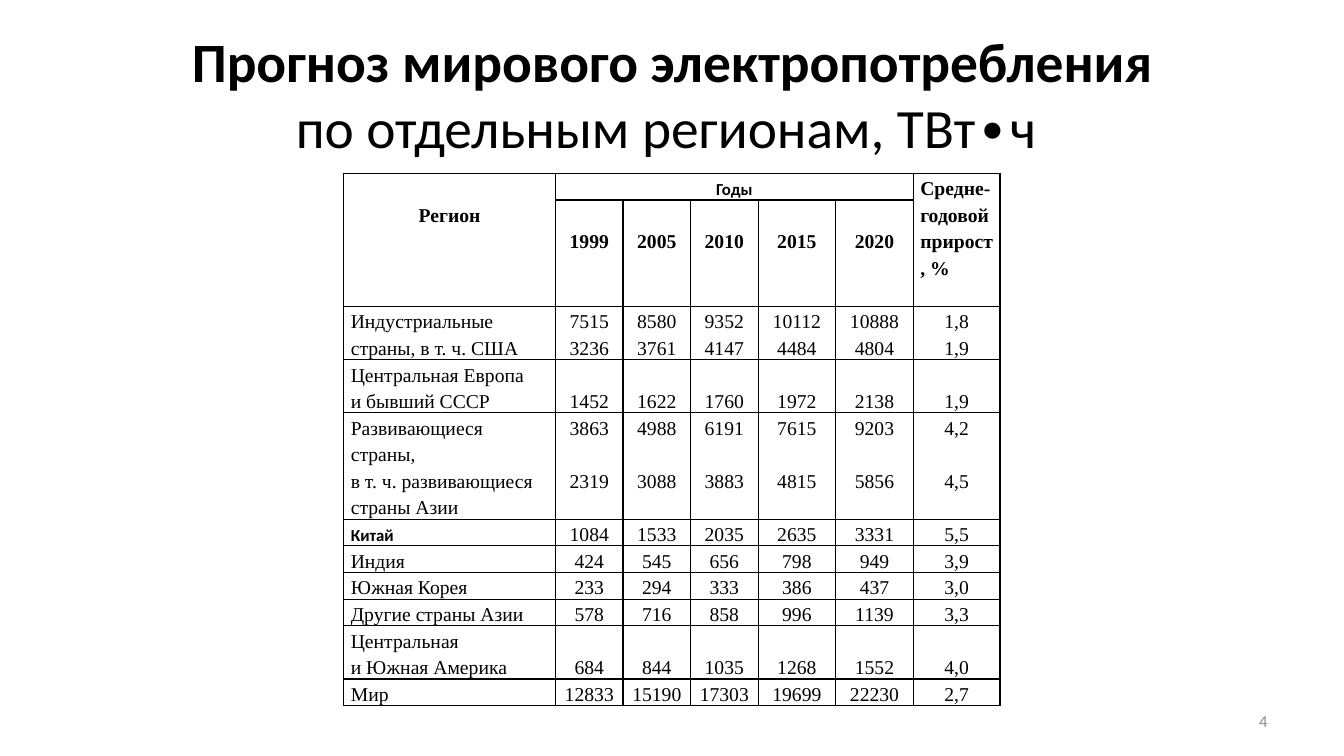
from lxml.etree import SubElement
from pptx import Presentation
from pptx.dml.color import RGBColor
from pptx.enum.text import MSO_ANCHOR as Anchor, MSO_AUTO_SIZE as AutoSize, PP_ALIGN as Align
from pptx.oxml.ns import qn
from pptx.util import Inches, Pt

COLORS = {"ink": "000000", "paper": "FFFFFF", "page_number": "8C8C8C"}
SANS, SERIF = "Calibri", "Times New Roman"
LINE = 19  # line pitch of the table, in points

COLUMN_WIDTHS = [2.1, 0.67, 0.67, 0.67, 0.77, 0.77, 0.86]
YEARS = ["1999", "2005", "2010", "2015", "2020"]
HEADER_LINES = [1, 4]

# Region, lines in the row, empty lines above the values, value lines
REGIONS = [
    ("Индустриальные\nстраны, в т. ч. США", 2, 0,
     ["7515 8580 9352 10112 10888 1,8", "3236 3761 4147 4484 4804 1,9"]),
    ("Центральная Европа\nи бывший СССР", 2, 1, ["1452 1622 1760 1972 2138 1,9"]),
    ("Развивающиеся страны,\nв т. ч. развивающиеся\nстраны Азии", 4, 0,
     ["3863 4988 6191 7615 9203 4,2", "2319 3088 3883 4815 5856 4,5"]),
    ("Китай", 1, 0, ["1084 1533 2035 2635 3331 5,5"]),
    ("Индия", 1, 0, ["424 545 656 798 949 3,9"]),
    ("Южная Корея", 1, 0, ["233 294 333 386 437 3,0"]),
    ("Другие страны Азии", 1, 0, ["578 716 858 996 1139 3,3"]),
    ("Центральная\nи Южная Америка", 2, 1, ["684 844 1035 1268 1552 4,0"]),
    ("Мир", 1, 0, ["12833 15190 17303 19699 22230 2,7"]),
]


def style_span(span, size, font, color="ink", bold=False):
    span.font.size = Pt(size)
    span.font.name = font
    span.font.bold = bold
    span.font.color.rgb = RGBColor.from_string(COLORS[color])


def place(shape, box):
    shape.left, shape.top, shape.width, shape.height = map(Inches, box)


def add_title(page, box):
    title = page.shapes.title
    place(title, box)
    frame = title.text_frame
    frame.text = "Прогноз мирового электропотребления\vпо отдельным регионам, ТВт∙ч "
    frame.word_wrap = True
    frame.auto_size = AutoSize.NONE
    frame.vertical_anchor = Anchor.MIDDLE
    para = frame.paragraphs[0]
    para.alignment = Align.CENTER
    for span, bold in zip(para.runs, (True, False)):
        style_span(span, 39.6, SANS, bold=bold)


def frame_cell(cell):
    """Black hairlines on all sides and a white fill."""
    properties = cell._tc.get_or_add_tcPr()
    for side in ("lnL", "lnR", "lnT", "lnB"):
        line = SubElement(properties, qn(f"a:{side}"), w=str(Pt(1)))
        fill = SubElement(line, qn("a:solidFill"))
        SubElement(fill, qn("a:srgbClr"), val=COLORS["ink"])
    cell.fill.solid()
    cell.fill.fore_color.rgb = RGBColor.from_string(COLORS["paper"])


def write_cell(cell, text, align=Align.CENTER, size=14, font=SERIF, bold=False,
               lines_above=0, lines_between=0):
    cell.margin_left = cell.margin_right = Inches(0.07)
    cell.margin_top, cell.margin_bottom = Pt(LINE * lines_above), 0
    cell.text_frame.text = text
    for index, para in enumerate(cell.text_frame.paragraphs):
        para.alignment = align
        para.line_spacing = Pt(LINE)
        if index and lines_between:
            para.space_before = Pt(LINE * lines_between)
        for span in para.runs:
            style_span(span, size, font, bold=bold)


def write_header(table):
    last = len(COLUMN_WIDTHS) - 1
    table.cell(0, 0).merge(table.cell(1, 0))
    table.cell(0, 1).merge(table.cell(0, last - 1))
    table.cell(0, last).merge(table.cell(1, last))
    write_cell(table.cell(0, 0), "Регион", bold=True, lines_above=1)
    write_cell(table.cell(0, 1), "Годы", size=12, font=SANS, bold=True)
    write_cell(table.cell(0, last), "Средне-годовой\nприрост, %", Align.JUSTIFY, bold=True)
    for column, year in enumerate(YEARS, 1):
        write_cell(table.cell(1, column), year, bold=True, lines_above=1)


def add_forecast_table(page, box):
    row_lines = HEADER_LINES + [lines for _, lines, _, _ in REGIONS]
    table = page.shapes.add_table(
        len(row_lines), len(COLUMN_WIDTHS), *map(Inches, box)).table
    table.first_row = table.horz_banding = False
    for column, width in zip(table.columns, COLUMN_WIDTHS):
        column.width = Inches(width)
    for row, lines in zip(table.rows, row_lines):
        row.height = Pt(LINE * lines)
    for cell in table.iter_cells():
        frame_cell(cell)
    write_header(table)

    # One row per region
    for row, (region, lines, above, values) in enumerate(REGIONS, len(HEADER_LINES)):
        accent = {"size": 12, "font": SANS, "bold": True} if region == "Китай" else {}
        write_cell(table.cell(row, 0), region, Align.JUSTIFY, **accent)
        columns = zip(*(line.split() for line in values))
        for column, entries in enumerate(columns, 1):
            write_cell(table.cell(row, column), "\n".join(entries),
                       lines_above=above, lines_between=1 if lines == 4 else 0)


def add_page_number(page, box):
    frame = page.shapes.add_textbox(*map(Inches, box)).text_frame
    frame.word_wrap = True
    frame.vertical_anchor = Anchor.MIDDLE
    frame.text = "4"
    para = frame.paragraphs[0]
    para.alignment = Align.RIGHT
    style_span(para.runs[0], 12, SANS, "page_number")


def main():
    deck = Presentation()
    deck.slide_width, deck.slide_height = Inches(13.33), Inches(7.5)
    page = deck.slides.add_slide(deck.slide_layouts[5])
    add_title(page, (0.67, 0.3, 12, 1.25))
    add_forecast_table(page, (3.41, 1.72, 6.51, 5.01))
    add_page_number(page, (9.56, 6.95, 3.11, 0.4))
    deck.save("out.pptx")


if __name__ == "__main__":
    main()
